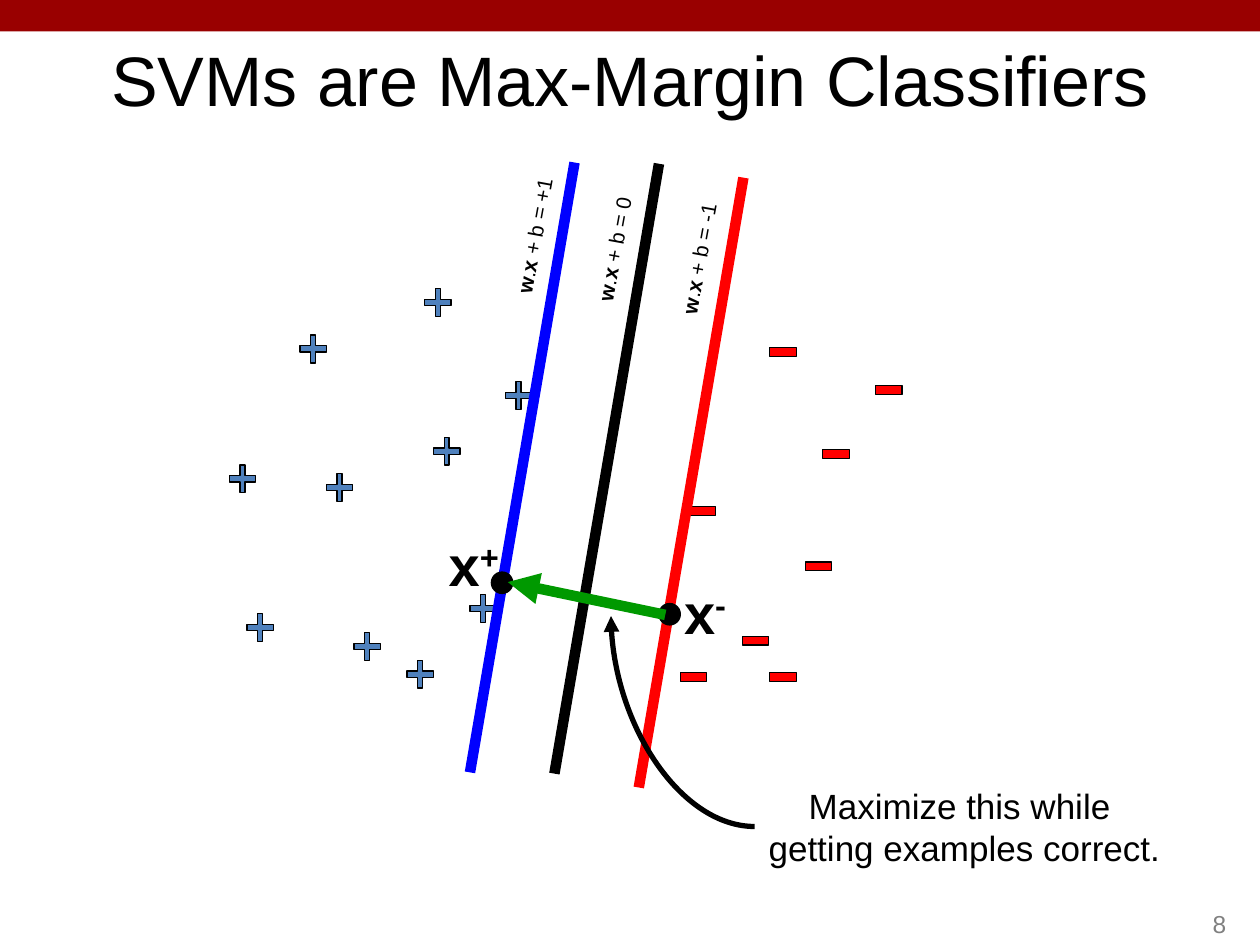
"""Build a slide that explains SVMs as max-margin classifiers."""
from dataclasses import dataclass

from lxml.etree import SubElement
from pptx import Presentation
from pptx.dml.color import RGBColor
from pptx.enum.shapes import MSO_CONNECTOR as Connector, MSO_SHAPE as Shape
from pptx.enum.text import MSO_ANCHOR as Anchor, PP_ALIGN as Align
from pptx.oxml.ns import qn
from pptx.util import Inches, Pt


@dataclass(frozen=True)
class Theme:
    """Colours as hex strings and type sizes in points."""
    font: str = "Arial"
    black: str = "000000"
    grey: str = "808080"
    bar: str = "990000"
    positive: str = "4F81BD"
    negative: str = "FF0000"
    blue: str = "0000FF"
    green: str = "009900"
    title: int = 40
    vector: int = 32
    caption: int = 20
    number: int = 14
    equation: int = 12


THEME = Theme()
POSITIVES = [(3.37, 2.29), (3.44, 3.47), (2.59, 3.76), (2.81, 5.02), (1.96, 4.87),
             (4.01, 3.03), (3.23, 5.24), (3.73, 4.72), (2.38, 2.66), (1.82, 3.69)]
NEGATIVES = [(6.11, 2.76), (5.47, 4.02), (6.53, 3.57), (6.39, 4.46),
             (5.89, 5.05), (6.11, 5.34), (5.4, 5.34), (6.95, 3.06)]
HYPERPLANES = [
    (THEME.blue, (3.73, 6.13), " + b = +1", (3.49, 1.68, 1.6, 0.4)),
    (THEME.negative, (5.07, 6.25), " + b = -1", (4.83, 1.86, 1.53, 0.4)),
    (THEME.black, (4.4, 6.14), " + b = 0", (4.2, 1.79, 1.45, 0.4)),
]
HYPERPLANE_RUN, HYPERPLANE_RISE = 0.83, 4.84
SUPPORT_VECTORS = [("-", (5.32, 4.54, 0.55, 0.63), (5.23, 4.79)),
                   ("+", (3.45, 4.16, 0.62, 0.63), (3.9, 4.54))]


def style_paragraph(paragraph, size, color=THEME.black, align=Align.CENTER):
    """Set the font and alignment of a paragraph."""
    paragraph.alignment = align
    paragraph.font.name = THEME.font
    paragraph.font.size = Pt(size)
    paragraph.font.color.rgb = RGBColor.from_string(color)


def add_text(shapes, box, size, color=THEME.black, align=Align.CENTER, anchor=Anchor.TOP):
    """Add an unwrapped text box and return it with its paragraph."""
    shape = shapes.add_textbox(*map(Inches, box))
    shape.text_frame.word_wrap = False
    shape.text_frame.vertical_anchor = anchor
    paragraph = shape.text_frame.paragraphs[0]
    style_paragraph(paragraph, size, color, align)
    return shape, paragraph


def add_run(paragraph, text, bold):
    """Append a run with its own weight."""
    run = paragraph.add_run()
    run.text = text
    run.font.bold = bold
    return run


def add_marker(shapes, kind, box, fill, outlined=True):
    """Add a filled preset shape with a thin black outline if wanted."""
    shape = shapes.add_shape(kind, *map(Inches, box))
    shape.shadow.inherit = False
    shape.fill.solid()
    shape.fill.fore_color.rgb = RGBColor.from_string(fill)
    if outlined:
        shape.line.color.rgb = RGBColor.from_string(THEME.black)
        shape.line.width = Pt(0.75)
    else:
        shape.line.fill.background()
    return shape


def add_line(shapes, start, end, color, width, kind=Connector.STRAIGHT, arrow=False):
    """Add a connector without shadow, with an arrowhead at its end if wanted."""
    line = shapes.add_connector(kind, *map(Inches, (*start, *end)))
    line.line.color.rgb = RGBColor.from_string(color)
    line.line.width = Pt(width)
    properties = line._element.spPr
    if arrow:
        SubElement(properties.find(qn("a:ln")), qn("a:tailEnd"), type="triangle")
    SubElement(properties, qn("a:effectLst"))
    return line


def add_examples(slide):
    """Add the groups of positive and negative examples."""
    positives = slide.shapes.add_group_shape().shapes
    for left, top in POSITIVES:
        plus = add_marker(positives, Shape.CROSS, (left, top, 0.21, 0.22), THEME.positive)
        plus.adjustments[0] = 0.406
    negatives = slide.shapes.add_group_shape().shapes
    for left, top in NEGATIVES:
        add_marker(negatives, Shape.RECTANGLE, (left, top, 0.21, 0.07), THEME.negative)


def add_hyperplane(slide, color, start, equation, box):
    """Add a slanted line grouped with its equation."""
    shapes = slide.shapes.add_group_shape().shapes
    end = start[0] + HYPERPLANE_RUN, start[1] - HYPERPLANE_RISE
    add_line(shapes, start, end, color, 6)
    label, paragraph = add_text(shapes, box, THEME.equation)
    label.rotation = 280.4
    for text, bold in (("w", True), (".", False), ("x", True), (equation, False)):
        add_run(paragraph, text, bold)


def add_support_vector(slide, sign, box, dot):
    """Add a dot grouped with its signed name."""
    shapes = slide.shapes.add_group_shape().shapes
    paragraph = add_text(shapes, box, THEME.vector)[1]
    add_run(paragraph, "x", True)
    superscript = add_run(paragraph, sign, True)
    superscript._r.get_or_add_rPr().set("baseline", "30000")
    add_marker(shapes, Shape.OVAL, (*dot, 0.17, 0.17), THEME.black)


def add_title(slide, text):
    """Place and format the title placeholder."""
    title = slide.shapes.title
    title.left, title.top, title.width, title.height = map(Inches, (0.75, 0.25, 8.5, 0.75))
    title.text_frame.text = text
    title.text_frame.vertical_anchor = Anchor.MIDDLE
    style_paragraph(title.text_frame.paragraphs[0], THEME.title)


def add_caption(slide):
    """Add the caption and the curved arrow to the margin."""
    paragraph = add_text(slide.shapes, (5.99, 6.18, 3.33, 0.77), THEME.caption)[1]
    paragraph.text = "Maximize this while \vgetting examples correct."
    curve = add_line(slide.shapes, (5.99, 6.56), (4.85, 4.89), THEME.black, 3,
                     Connector.CURVE, arrow=True)
    curve._element.spPr.find(qn("a:prstGeom")).set("prst", "curvedConnector2")


def main():
    """Build and save the slide."""
    presentation = Presentation()
    presentation.slide_width, presentation.slide_height = Inches(10), Inches(7.5)
    slide = presentation.slides.add_slide(presentation.slide_layouts[5])
    add_marker(slide.shapes, Shape.RECTANGLE, (0, 0, 10, 0.25), THEME.bar, outlined=False)
    add_title(slide, "SVMs are Max-Margin Classifiers")
    add_examples(slide)
    for hyperplane in HYPERPLANES:
        add_hyperplane(slide, *hyperplane)
    for vector in SUPPORT_VECTORS:
        add_support_vector(slide, *vector)
    add_line(slide.shapes, (5.28, 4.88), (4.03, 4.62), THEME.green, 6, arrow=True)
    number = add_text(slide.shapes, (7.75, 7, 2.08, 0.5), THEME.number, THEME.grey,
                      Align.RIGHT, Anchor.BOTTOM)
    number[0].text_frame.word_wrap = True
    number[1].text = "8"
    add_caption(slide)
    presentation.save("out.pptx")


if __name__ == "__main__":
    main()
